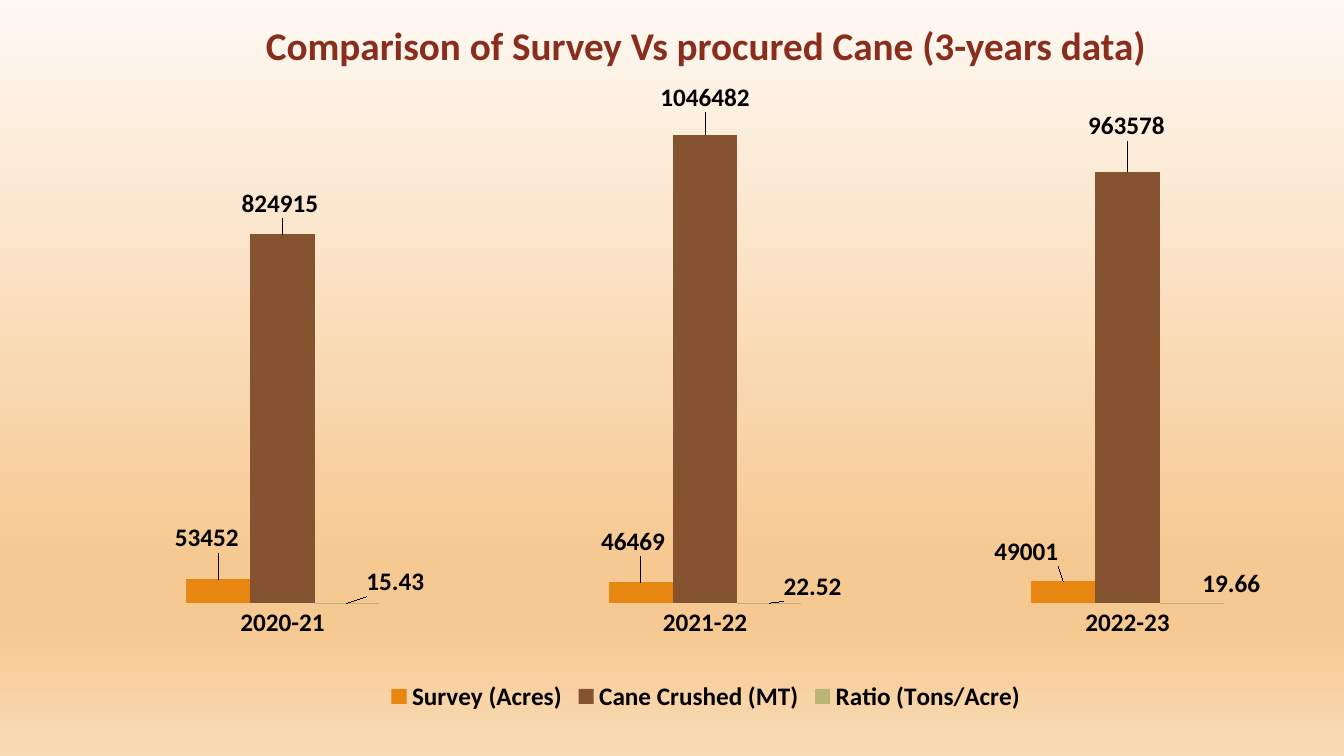
from lxml.etree import SubElement
from pptx import Presentation
from pptx.chart.data import CategoryChartData
from pptx.dml.color import RGBColor
from pptx.enum.chart import XL_CHART_TYPE as ChartType, XL_LABEL_POSITION as LabelPosition
from pptx.enum.chart import XL_LEGEND_POSITION as LegendPosition, XL_TICK_MARK as TickMark
from pptx.enum.text import MSO_AUTO_SIZE as AutoSize, PP_ALIGN as Align
from pptx.oxml import parse_xml
from pptx.oxml.ns import nsdecls, qn
from pptx.util import Cm, Pt

BACKGROUND_STOPS = [(0, "FEF9F3"), (74, "F7C992"), (83, "F7C992"), (100, "F9DBB6")]
SEASONS = ["2020-21", "2021-22", "2022-23"]
SERIES = [
    ("Survey (Acres)", "E78712", [53452, 46469, 49001],
     [(-0.009, -0.032), (-0.006, -0.032), (-0.029, -0.016)]),
    ("Cane Crushed (MT)", "865331", [824915, 1046482, 963578],
     [(-0.002, -0.017), (0, -0.026), (-0.001, -0.039)]),
    ("Ratio (Tons/Acre)", "BBB473", [15.43, 22.52, 19.66],
     [(0.038, -0.004), (0.034, 0.003), (0.031, -0.001)]),
]


def color(hex_string):
    """Turn a hex string into a colour."""
    return RGBColor.from_string(hex_string)


def style_font(font, size, hex_string):
    """Apply the bold Calibri style used throughout the slide."""
    font.name = "Calibri"
    font.size = Pt(size)
    font.bold = True
    font.color.rgb = color(hex_string)


def manual_layout(**settings):
    """Build a chart layout element from its settings."""
    layout = parse_xml(f"<c:layout {nsdecls('c')}><c:manualLayout/></c:layout>")
    for name, value in settings.items():
        SubElement(layout[0], qn(f"c:{name}")).set("val", str(value))
    return layout


def paint_background(slide):
    """Fill the slide with the vertical orange gradient."""
    fill = slide.background.fill
    fill.gradient()
    fill.gradient_angle = 270
    stop_list = slide.element.xpath(".//a:gsLst")[0]
    for stop in list(stop_list):
        stop_list.remove(stop)
    for percent, hex_string in BACKGROUND_STOPS:
        stop = SubElement(stop_list, qn("a:gs"), pos=str(percent * 1000))
        SubElement(stop, qn("a:srgbClr"), val=hex_string)


def label_series(series, offsets):
    """Label each column with its value, shifted by its offset."""
    for index, (x, y) in enumerate(offsets):
        label = series.points[index].data_label
        style_font(label.font, 18, "000000")
        label.position = LabelPosition.OUTSIDE_END
    for element, (x, y) in zip(series._element.xpath("c:dLbls/c:dLbl"), offsets):
        element.insert(1, manual_layout(x=x, y=y))


def add_cane_chart(slide, left, top, width, height):
    """Add the clustered columns of survey, crushed cane and ratio."""
    data = CategoryChartData()
    data.categories = SEASONS
    for name, _, values, _ in SERIES:
        data.add_series(name, values)
    chart = slide.shapes.add_chart(
        ChartType.COLUMN_CLUSTERED, left, top, width, height, data).chart
    style_font(chart.font, 18, "000000")
    chart.has_title = False
    chart.has_legend = True
    chart.legend.position = LegendPosition.BOTTOM
    chart.legend.include_in_layout = False
    style_font(chart.legend.font, 18, "000000")

    value_axis = chart.value_axis
    value_axis.minimum_scale, value_axis.maximum_scale = 0, 1200000
    value_axis.has_major_gridlines = False
    value_axis.visible = False
    category_axis = chart.category_axis
    category_axis.major_tick_mark = TickMark.NONE
    category_axis.format.line.fill.background()
    style_font(category_axis.tick_labels.font, 18, "000000")

    plot = chart.plots[0]
    plot.gap_width, plot.overlap = 358, 0
    plot.vary_by_categories = False
    for series, (_, hex_string, _, offsets) in zip(plot.series, SERIES):
        series.format.fill.solid()
        series.format.fill.fore_color.rgb = color(hex_string)
        label_series(series, offsets)

    plot_area = chart._chartSpace.chart.plotArea
    for layout in plot_area.findall(qn("c:layout")):
        plot_area.remove(layout)
    plot_area.insert(0, manual_layout(
        layoutTarget="inner", xMode="edge", yMode="edge",
        x=0.003, y=0.059, w=0.993, h=0.777))


def add_title(slide, left, top, width, height):
    """Add the centred slide title."""
    text_frame = slide.shapes.add_textbox(left, top, width, height).text_frame
    text_frame.word_wrap = True
    text_frame.auto_size = AutoSize.SHAPE_TO_FIT_TEXT
    text_frame.text = "Comparison of Survey Vs procured Cane (3-years data)"
    paragraph = text_frame.paragraphs[0]
    paragraph.alignment = Align.CENTER
    style_font(paragraph.runs[0].font, 28, "892D1D")


def main():
    """Build and save the presentation."""
    presentation = Presentation()
    presentation.slide_width, presentation.slide_height = Cm(33.87), Cm(19.05)
    slide = presentation.slides.add_slide(presentation.slide_layouts[6])
    paint_background(slide)
    add_cane_chart(slide, Cm(1.7), Cm(0.64), Cm(32.17), Cm(17.42))
    add_title(slide, Cm(4.22), Cm(0.41), Cm(27.13), Cm(1.45))
    presentation.save("out.pptx")


if __name__ == "__main__":
    main()
